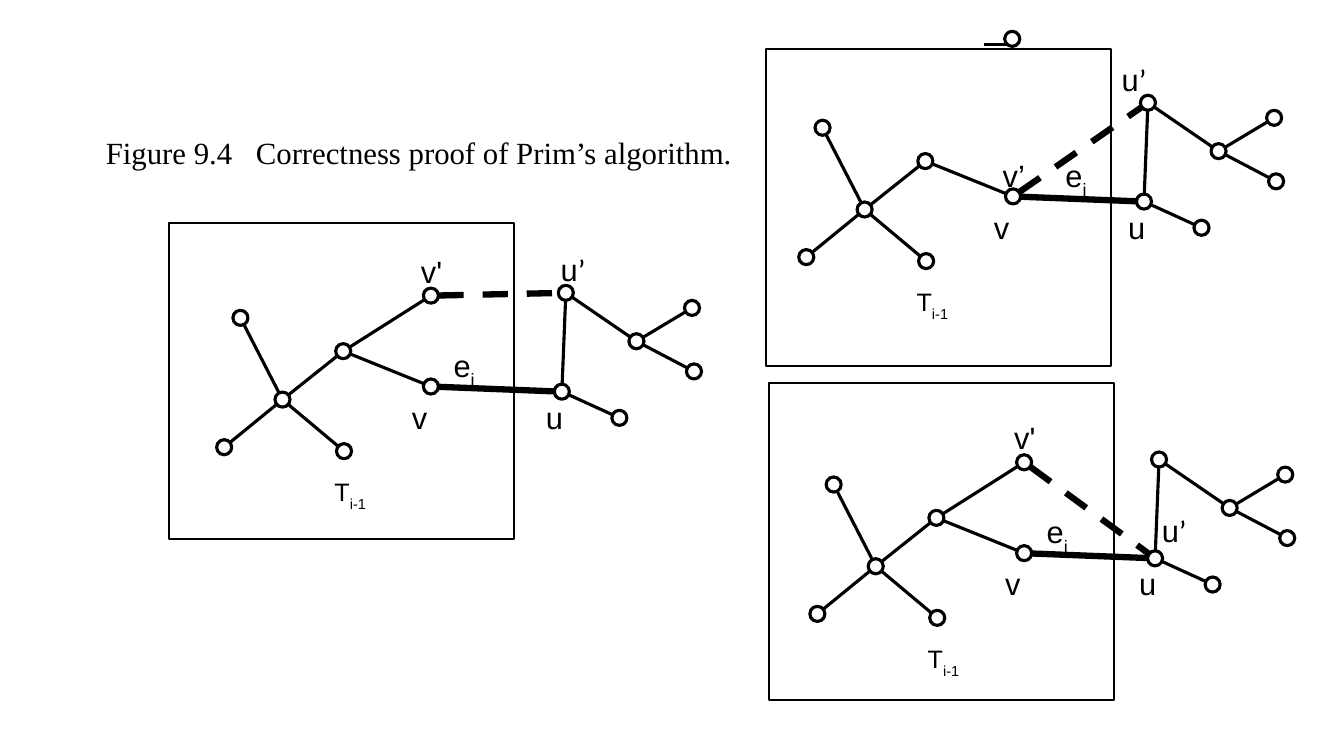
from dataclasses import dataclass
from math import hypot

from lxml import etree
from pptx import Presentation
from pptx.dml.color import RGBColor
from pptx.enum.dml import MSO_LINE
from pptx.enum.shapes import MSO_CONNECTOR, MSO_SHAPE
from pptx.oxml.ns import qn
from pptx.util import Cm, Pt

DASH = MSO_LINE.DASH
STRAIGHT = MSO_CONNECTOR.STRAIGHT
ELLIPSE = MSO_SHAPE.OVAL
RECTANGLE = MSO_SHAPE.RECTANGLE


@dataclass(frozen=True)
class Theme:
    ink: RGBColor = RGBColor(0, 0, 0)
    paper: RGBColor = RGBColor(255, 255, 255)
    caption_font: str = "Times New Roman"
    label_font: str = "Arial"
    prime_font: str = "Calibri"
    text_size: Pt = Pt(22)
    tree_size: Pt = Pt(18)
    frame_line: Pt = Pt(1.5)
    thin_line: Pt = Pt(2.25)
    thick_line: Pt = Pt(4.5)


theme = Theme()

# All places are in centimetres; nodes are given by their centres.
NODE_RADIUS = 0.19
FRAME_SIZE = (8.69, 7.98)
NODES = {
    "leaf top": (6.06, 8.01), "hub": (7.12, 10.07), "leaf left": (5.65, 11.27),
    "branch": (8.65, 8.85), "leaf right": (8.67, 11.37),
    "v'": (10.86, 7.45), "v": (10.86, 9.74),
    "u'": (14.26, 7.38), "u": (14.16, 9.87), "fork": (16.04, 8.6),
    "fork top": (17.44, 7.76), "fork bottom": (17.49, 9.36), "leaf u": (15.61, 10.53),
}
EDGES = [
    ("fork", "fork top"), ("fork", "fork bottom"), ("u'", "fork"), ("u'", "u"),
    ("u", "leaf u"), ("branch", "v"), ("branch", "hub"),
    ("leaf top", "hub"), ("hub", "leaf left"), ("hub", "leaf right"),
]
# Each label: text, subscript, left, top, relative to the panel's graph.
SHARED_LABELS = [("v", "", 10.38, 10.04), ("u", "", 13.76, 10.04), ("T", "i-1", 8.43, 12.01)]
# Each panel: graph offset, frame corner, ends of the dashed edge, own labels.
PANELS = [
    ((0, 0), (4.27, 5.61), ("v'", "u'"),
     [("v'", "", 10.61, 6.36), ("u’", "", 14.13, 6.32), ("e", "i", 11.43, 8.73)]),
    ((14.67, -4.79), (19.3, 1.24), ("v", "u'"),
     [("v’", "", 10.6, 8.73), ("u’", "", 13.6, 6.32), ("e", "i", 12.18, 8.73)]),
    ((14.95, 4.2), (19.38, 9.65), ("v'", "u"),
     [("v'", "", 10.61, 6.36), ("u’", "", 14.33, 8.69), ("e", "i", 11.43, 8.73)]),
]
STRAY_NODE = (25.51, 0.98)
STRAY_STUB = ((25.37, 1.12), (24.79, 1.12))

prs = Presentation()
prs.slide_width, prs.slide_height = Cm(33.87), Cm(19.05)
slide = prs.slides.add_slide(prs.slide_layouts[6])


def add_edge(start, end, width, dash=None):
    edge = slide.shapes.add_connector(STRAIGHT, *(Cm(c) for c in (*start, *end)))
    edge.line.color.rgb = theme.ink
    edge.line.width = width
    if dash:
        edge.line.dash_style = dash
    etree.SubElement(edge._element.spPr, qn("a:effectLst"))


def add_text(left, top, width, height, font_name, size):
    """Add a text box without insets and return its styled first paragraph."""
    frame = slide.shapes.add_textbox(Cm(left), Cm(top), Cm(width), Cm(height)).text_frame
    frame.margin_left = frame.margin_right = frame.margin_top = frame.margin_bottom = 0
    frame.word_wrap = False
    paragraph = frame.paragraphs[0]
    paragraph.font.name, paragraph.font.size = font_name, size
    paragraph.font.color.rgb = theme.ink
    return paragraph


caption = add_text(2.67, 3.38, 16, 0.94, theme.caption_font, theme.text_size)
caption.text = "Figure 9.4\tCorrectness proof of Prim’s algorithm."
tab_list = etree.Element(qn("a:tabLst"))
etree.SubElement(tab_list, qn("a:tab"), pos=str(Cm(3.78)), algn="l")
caption._p.pPr.insert(0, tab_list)

for (dx, dy), corner, dashed_ends, own_labels in PANELS:
    nodes = {name: (x + dx, y + dy) for name, (x, y) in NODES.items()}
    edges = [(ends, theme.thin_line, None) for ends in EDGES]
    edges += [(dashed_ends, theme.thick_line, DASH), (("v", "u"), theme.thick_line, None)]
    if dashed_ends == ("v", "u'"):
        nodes["v'"] = STRAY_NODE
        add_edge(*STRAY_STUB, theme.thin_line)
    else:
        edges.append((("v'", "branch"), theme.thin_line, None))

    for x, y in nodes.values():
        node = slide.shapes.add_shape(
            ELLIPSE, Cm(x - NODE_RADIUS), Cm(y - NODE_RADIUS),
            Cm(2 * NODE_RADIUS), Cm(2 * NODE_RADIUS))
        node.shadow.inherit = False
        node.fill.solid()
        node.fill.fore_color.rgb = theme.paper
        node.line.color.rgb = theme.ink
        node.line.width = theme.thin_line

    for (first, second), width, dash in edges:
        (x1, y1), (x2, y2) = nodes[first], nodes[second]
        trim = NODE_RADIUS / hypot(x2 - x1, y2 - y1)
        trim_x, trim_y = trim * (x2 - x1), trim * (y2 - y1)
        add_edge((x1 + trim_x, y1 + trim_y), (x2 - trim_x, y2 - trim_y), width, dash)

    for text, subscript, left, top in own_labels + SHARED_LABELS:
        size = theme.tree_size if text == "T" else theme.text_size
        label = add_text(left + dx, top + dy, 0.9, 0.9, theme.label_font, size)
        label.add_run().text = text[0] if text == "u’" else text
        if text == "u’":
            prime = label.add_run()
            prime.text = "’"
            prime.font.name = theme.prime_font
        if subscript:
            index = label.add_run()
            index.text = subscript
            index.font._element.set("baseline", "-30000")

    frame = slide.shapes.add_shape(RECTANGLE, *(Cm(c) for c in corner + FRAME_SIZE))
    frame.shadow.inherit = False
    frame.fill.background()
    frame.line.color.rgb = theme.ink
    frame.line.width = theme.frame_line

prs.save("out.pptx")
